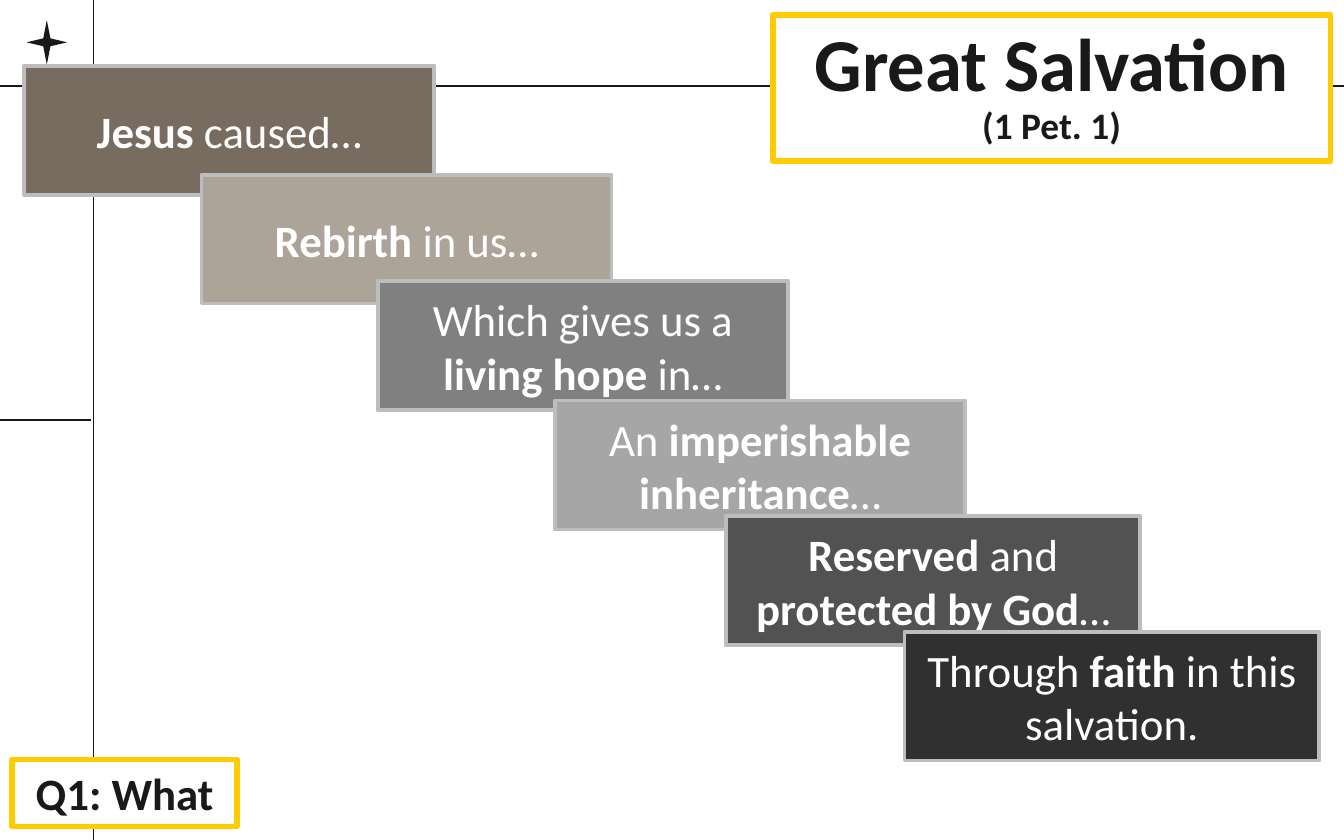
from lxml import etree
from pptx import Presentation
from pptx.dml.color import RGBColor
from pptx.enum.shapes import MSO_CONNECTOR, MSO_SHAPE
from pptx.enum.text import MSO_ANCHOR, PP_ALIGN
from pptx.oxml.ns import qn
from pptx.util import Pt

STRAIGHT = MSO_CONNECTOR.STRAIGHT
RECTANGLE = MSO_SHAPE.RECTANGLE
STAR = MSO_SHAPE.STAR_4_POINT
MIDDLE = MSO_ANCHOR.MIDDLE
BOTTOM = MSO_ANCHOR.BOTTOM
CENTER = PP_ALIGN.CENTER

INK = RGBColor(0x19, 0x19, 0x19)
WHITE = RGBColor(0xFF, 0xFF, 0xFF)
GOLD = RGBColor(0xFF, 0xCC, 0x00)
SILVER = RGBColor(0xBD, 0xBD, 0xBD)
BROWN = RGBColor(0x78, 0x6C, 0x61)
TAUPE = RGBColor(0xAC, 0xA3, 0x99)
GRAY = RGBColor(0x80, 0x80, 0x80)
LIGHT_GRAY = RGBColor(0xA6, 0xA6, 0xA6)
DARK_GRAY = RGBColor(0x52, 0x52, 0x52)
CHARCOAL = RGBColor(0x30, 0x30, 0x30)

FONT = "Calibri"
SLIDE_WIDTH, SLIDE_HEIGHT = 720, 450
STEP_HEIGHT = 69.1
STEPS = [
    (0, 0, 219.6, BROWN, [("Jesus", True), (" caused…", False)]),
    (95, 58.3, 219.6, TAUPE, [("Rebirth", True), (" in us…", False)]),
    (189.4, 115.2, 219.6, GRAY,
     [("Which gives us a ", False), ("living hope", True), (" in…", False)]),
    (284.4, 179.3, 219.6, LIGHT_GRAY,
     [("An ", False), ("imperishable inheritance", True), ("…", False)]),
    (375.9, 241.2, 222, DARK_GRAY,
     [("Reserved", True), (" and ", False), ("protected by God", True), ("…", False)]),
    (471.6, 303.1, 222, CHARCOAL,
     [("Through ", False), ("faith", True), (" in this salvation.", False)]),
]


def add_rule(slide, start_x, start_y, end_x, end_y):
    rule = slide.shapes.add_connector(
        STRAIGHT, Pt(start_x), Pt(start_y), Pt(end_x), Pt(end_y))
    rule.line.color.rgb = INK
    rule.line.width = Pt(0.75)
    etree.SubElement(rule._element.spPr, qn("a:effectLst"))


def add_panel(slide, box, fill, outline, outline_width):
    shape = slide.shapes.add_shape(RECTANGLE, *[Pt(length) for length in box])
    shape.shadow.inherit = False
    shape.fill.solid()
    shape.fill.fore_color.rgb = fill
    shape.line.color.rgb = outline
    shape.line.width = Pt(outline_width)
    frame = shape.text_frame
    frame.word_wrap = True
    frame.vertical_anchor = MIDDLE
    frame.paragraphs[0].alignment = CENTER
    return frame


def add_run(paragraph, text, size, color, bold):
    run = paragraph.add_run()
    run.text = text
    run.font.name = FONT
    run.font.size = Pt(size)
    run.font.bold = bold
    run.font.color.rgb = color


def add_backdrop(slide, left, top, width, height):
    add_rule(slide, left - 1.4, top + 225, left + 49, top + 225)
    add_rule(slide, left - 2.9, top + 46.1, left + width + 2.9, top + 46.1)
    add_rule(slide, left + 50.2, top - 2.9, left + 50.2, top + height + 2.9)
    star = slide.shapes.add_shape(
        STAR, Pt(left + 14.2), Pt(top + 10.8), Pt(21.8), Pt(23.8))
    star.adjustments[0] = 0.125
    star.shadow.inherit = False
    star.fill.solid()
    star.fill.fore_color.rgb = INK
    star.line.fill.background()


def add_gold_panel(slide, box):
    frame = add_panel(slide, box, WHITE, GOLD, 3)
    frame.margin_left = frame.margin_right = Pt(7.2)
    frame.margin_top = frame.margin_bottom = Pt(7.2)
    return frame


def add_question(slide, *box):
    frame = add_gold_panel(slide, box)
    add_run(frame.paragraphs[0], "Q1: What", 24, INK, True)


def add_title(slide, *box):
    frame = add_gold_panel(slide, box)
    frame.vertical_anchor = BOTTOM
    paragraph = frame.paragraphs[0]
    paragraph.line_spacing = 0.9
    add_run(paragraph, "Great Salvation", 40, INK, True)
    paragraph.add_line_break()
    add_run(paragraph, "(1 Pet. 1)", 20, INK, True)


def add_staircase(slide, left, top):
    for offset_x, offset_y, width, fill, runs in STEPS:
        box = (left + offset_x, top + offset_y, width, STEP_HEIGHT)
        frame = add_panel(slide, box, fill, SILVER, 2)
        for text, bold in runs:
            add_run(frame.paragraphs[0], text, 24, WHITE, bold)


def main():
    presentation = Presentation()
    presentation.slide_width = Pt(SLIDE_WIDTH)
    presentation.slide_height = Pt(SLIDE_HEIGHT)
    slide = presentation.slides.add_slide(presentation.slide_layouts[6])
    slide.background.fill.solid()
    slide.background.fill.fore_color.rgb = WHITE
    add_backdrop(slide, 0, 0, SLIDE_WIDTH, SLIDE_HEIGHT)
    add_question(slide, 6.5, 406.8, 120.5, 36)
    add_title(slide, 414, 7.9, 298.8, 78.5)
    add_staircase(slide, 13, 35.3)
    presentation.save("out.pptx")


if __name__ == "__main__":
    main()
